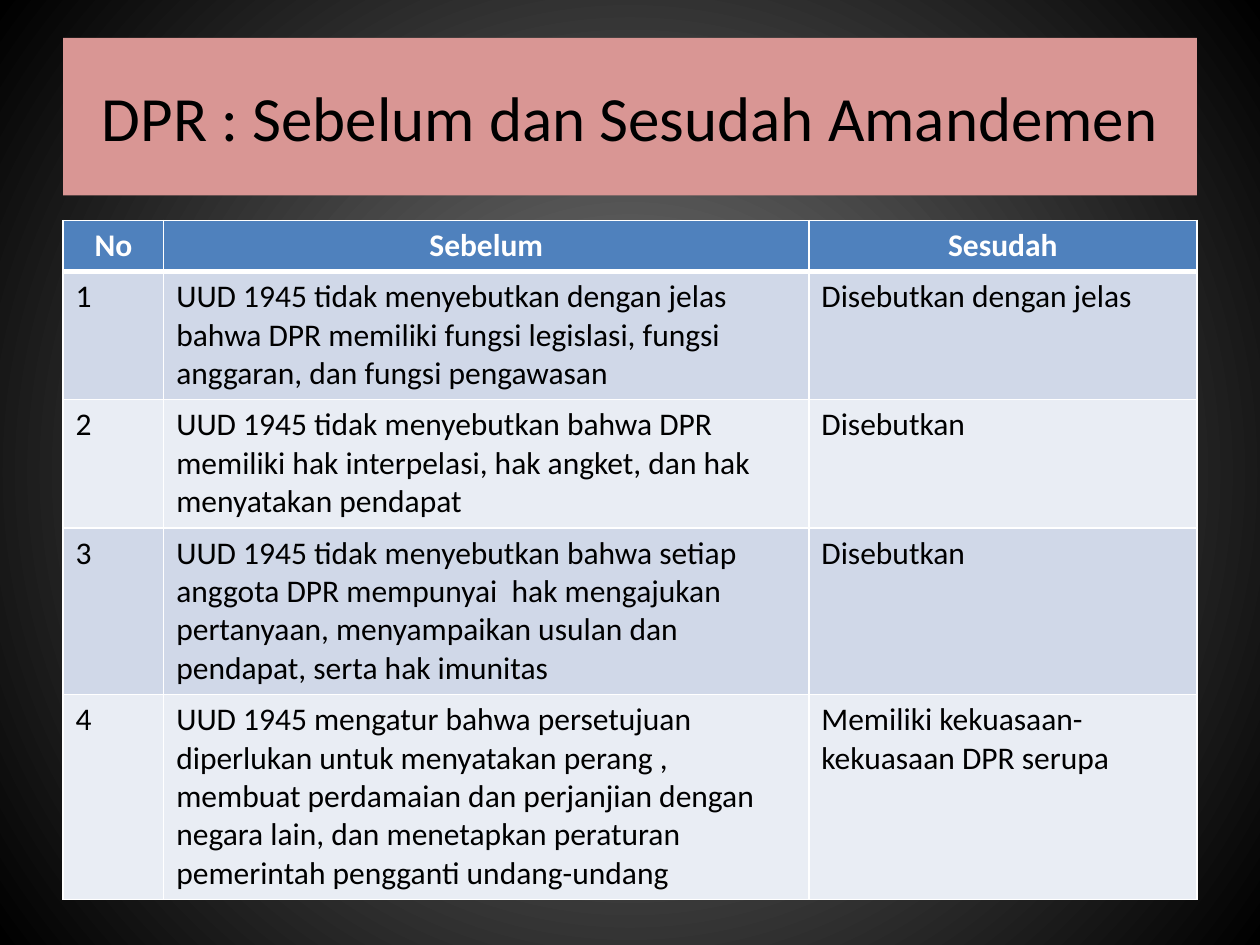
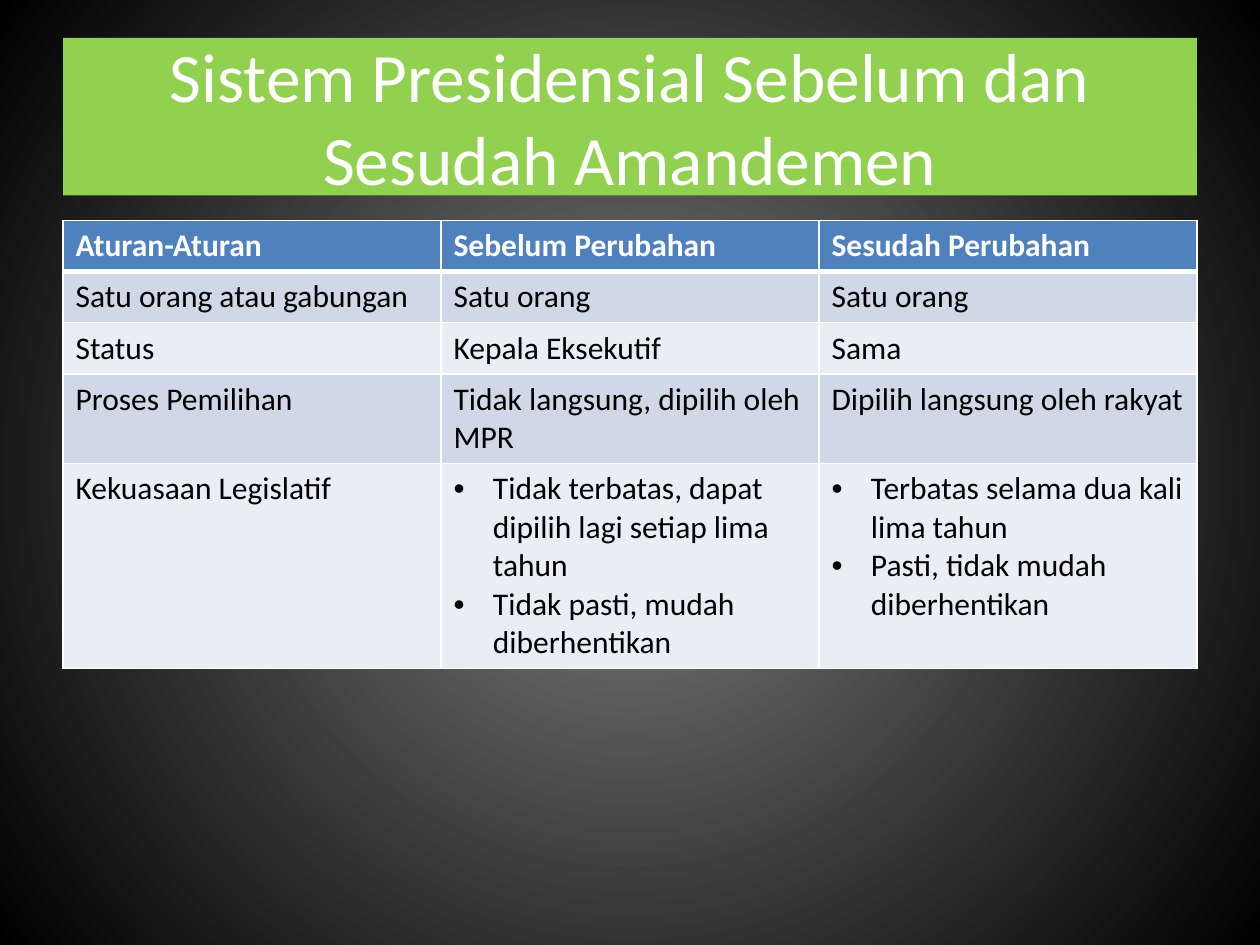
import pptx
import pptx.dml.color
import pptx.enum.text
import pptx.oxml
import pptx.oxml.ns
import pptx.util
from lxml import etree

Pt = pptx.util.Pt
qn = pptx.oxml.ns.qn
ALIGN = pptx.enum.text.PP_ALIGN

FONT = "Calibri"
WHITE, BLACK = "FFFFFF", "000000"
GLOW = "7F7F7F"
HEADER_FILL = "4F81BD"
BAND_FILLS = ("D0D8E8", "E9EDF4")
TITLE_BOX = (36, 21.6, 648, 90)
TABLE_BOX = (36, 126, 648)
LINE_HEIGHT, CELL_PADDING = 22, 7.2
BULLET_INDENT = 22.5


def color(value):
    """Turn a hex string into a colour."""
    return pptx.dml.color.RGBColor.from_string(value)


def set_font(para, size, value, bold=False):
    """Format a whole paragraph."""
    para.font.name = FONT
    para.font.size = Pt(size)
    para.font.bold = bold
    para.font.color.rgb = color(value)


def set_background(master):
    """Give every slide a radial glow fading to black."""
    fill = master.background.fill
    fill.gradient()
    for stop, value in zip(fill.gradient_stops, (GLOW, BLACK)):
        stop.color.rgb = color(value)
    linear = next(master.element.iter(qn("a:lin")))
    radial = etree.Element(qn("a:path"), path="circle")
    etree.SubElement(radial, qn("a:fillToRect"), {side: "50000" for side in "ltrb"})
    linear.getparent().replace(linear, radial)


def add_title(page, box, text, fill, size, value):
    """Place the title as a filled band."""
    title = page.shapes.title
    title.left, title.top, title.width, title.height = map(Pt, box)
    title.fill.solid()
    title.fill.fore_color.rgb = color(fill)
    frame = title.text_frame
    frame.text = text
    frame.word_wrap = True
    frame.auto_size = pptx.enum.text.MSO_AUTO_SIZE.NONE
    frame.vertical_anchor = pptx.enum.text.MSO_ANCHOR.MIDDLE
    para = frame.paragraphs[0]
    para.alignment = ALIGN.CENTER
    set_font(para, size, value)


def add_bullet(para):
    """Give a paragraph a hanging round bullet."""
    properties = para._p.get_or_add_pPr()
    indent = Pt(BULLET_INDENT)
    properties.set("marL", str(indent))
    properties.set("indent", str(-indent))
    etree.SubElement(properties, qn("a:buFont"), typeface="Arial")
    etree.SubElement(properties, qn("a:buChar"), char="•")


def set_borders(cell, top, bottom):
    """Draw white cell borders, with the given top and bottom widths."""
    properties = cell._tc.get_or_add_tcPr()
    widths = {"L": 1, "R": 1, "T": top, "B": bottom}
    for position, (side, width) in enumerate(widths.items()):
        line = etree.Element(qn(f"a:ln{side}"), w=str(Pt(width)))
        solid = etree.SubElement(line, qn("a:solidFill"))
        etree.SubElement(solid, qn("a:srgbClr"), val=WHITE)
        properties.insert(position, line)


def fill_cell(cell, content, row, header_align):
    """Write and format one cell; a list becomes bullets."""
    header = row == 0
    bulleted = isinstance(content, list)
    cell.text = "\n".join(content) if bulleted else content
    cell.fill.solid()
    cell.fill.fore_color.rgb = color(HEADER_FILL if header else BAND_FILLS[(row - 1) % 2])
    set_borders(cell, 3 if row == 1 else 1, 3 if header else 1)
    for para in cell.text_frame.paragraphs:
        para.alignment = header_align if header else ALIGN.LEFT
        if bulleted:
            add_bullet(para)
        set_font(para, 18, WHITE if header else BLACK, header)


def add_comparison(page, box, column_shares, line_counts, rows, header_align):
    """Place a banded table whose rows fit their number of text lines."""
    left, top, width = box
    heights = [count * LINE_HEIGHT + CELL_PADDING for count in line_counts]
    table = page.shapes.add_table(
        len(rows), len(column_shares), Pt(left), Pt(top), Pt(width), Pt(sum(heights))
    ).table
    for column, share in zip(table.columns, column_shares):
        column.width = Pt(width * share / sum(column_shares))
    for row, (height, contents) in enumerate(zip(heights, rows)):
        table.rows[row].height = Pt(height)
        for column, content in enumerate(contents):
            fill_cell(table.cell(row, column), content, row, header_align)


def add_page(deck, title, comparison):
    """Add a slide with a title band above a comparison table."""
    page = deck.slides.add_slide(deck.slide_layouts[5])
    add_title(page, TITLE_BOX, *title)
    add_comparison(page, TABLE_BOX, *comparison)


PARLIAMENT_ROWS = [
    ("No", "Sebelum", "Sesudah"),
    ("1", "UUD 1945 tidak menyebutkan dengan jelas bahwa DPR memiliki fungsi legislasi, "
     "fungsi anggaran, dan fungsi pengawasan", "Disebutkan dengan jelas"),
    ("2", "UUD 1945 tidak menyebutkan bahwa DPR memiliki hak interpelasi, hak angket, "
     "dan hak menyatakan pendapat", "Disebutkan"),
    ("3", "UUD 1945 tidak menyebutkan bahwa setiap anggota DPR mempunyai  hak mengajukan "
     "pertanyaan, menyampaikan usulan dan pendapat, serta hak imunitas", "Disebutkan"),
    ("4", "UUD 1945 mengatur bahwa persetujuan diperlukan untuk menyatakan perang , "
     "membuat perdamaian dan perjanjian dengan negara lain, dan menetapkan peraturan "
     "pemerintah pengganti undang-undang", "Memiliki kekuasaan-kekuasaan DPR serupa"),
]

PRESIDENT_ROWS = [
    ("Aturan-Aturan", "Sebelum Perubahan", "Sesudah Perubahan"),
    ("Satu orang atau gabungan", "Satu orang", "Satu orang"),
    ("Status", "Kepala Eksekutif", "Sama"),
    ("Proses Pemilihan", "Tidak langsung, dipilih oleh MPR", "Dipilih langsung oleh rakyat"),
    ("Kekuasaan Legislatif",
     ["Tidak terbatas, dapat dipilih lagi setiap lima tahun", "Tidak pasti, mudah diberhentikan"],
     ["Terbatas selama dua kali lima tahun", "Pasti, tidak mudah diberhentikan"]),
]


def main():
    """Build and save the deck."""
    deck = pptx.Presentation()
    deck.slide_width, deck.slide_height = Pt(720), Pt(540)
    set_background(deck.slide_master)
    add_page(
        deck,
        ("DPR : Sebelum dan Sesudah Amandemen", "D99694", 36, BLACK),
        ((0.8, 5.12, 3.08), (1, 3, 3, 4, 5), PARLIAMENT_ROWS, ALIGN.CENTER),
    )
    add_page(
        deck,
        ("Sistem Presidensial Sebelum dan Sesudah Amandemen", "92D050", 39.6, WHITE),
        ((1, 1, 1), (1, 1, 1, 2, 5), PRESIDENT_ROWS, ALIGN.LEFT),
    )
    deck.save("out.pptx")


if __name__ == "__main__":
    main()
